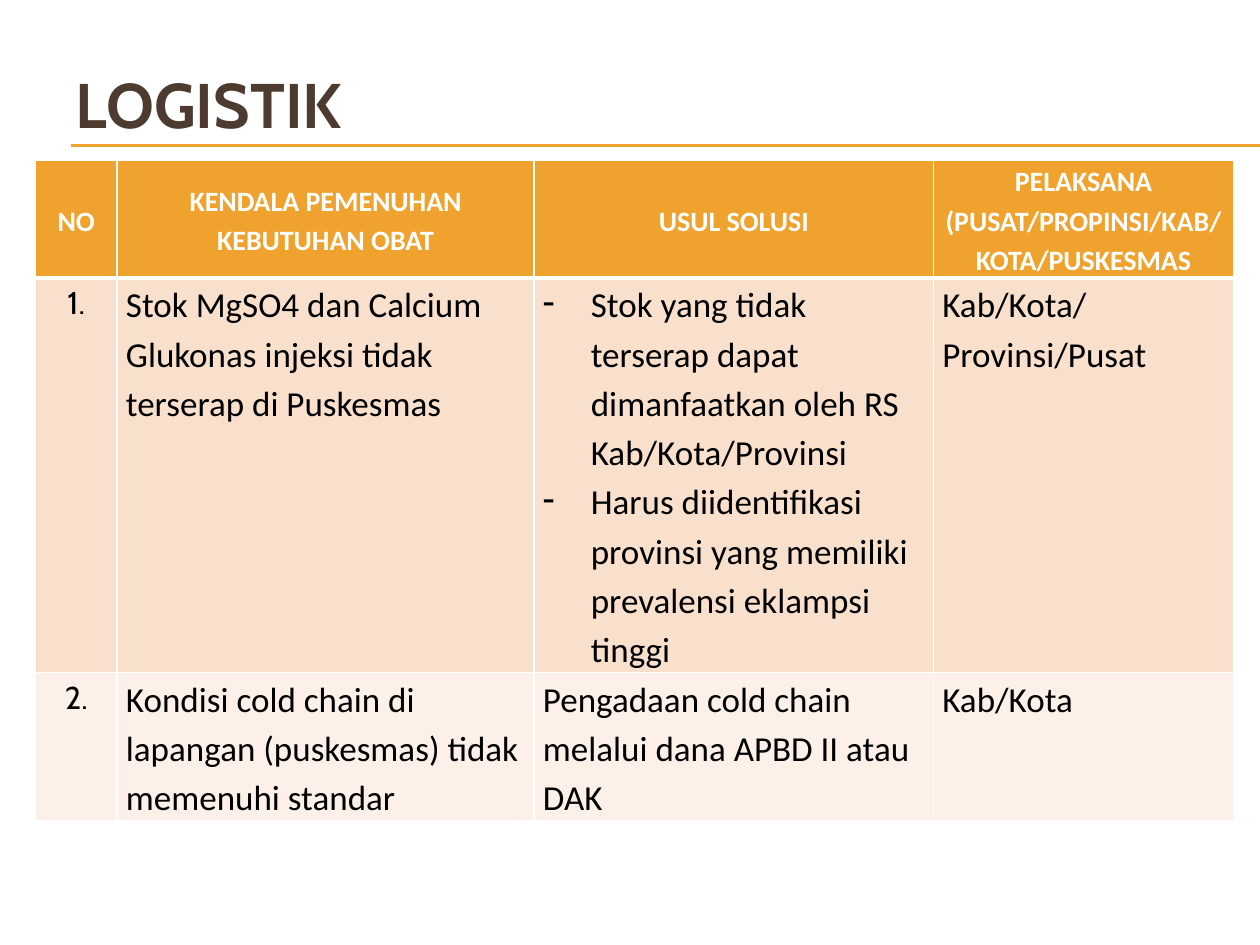
from dataclasses import dataclass

from lxml.etree import SubElement
from pptx import Presentation
from pptx.dml.color import RGBColor
from pptx.enum.shapes import MSO_CONNECTOR as Conn
from pptx.enum.text import MSO_ANCHOR as Anchor, PP_ALIGN as Align
from pptx.oxml import parse_xml
from pptx.oxml.ns import nsdecls, qn
from pptx.util import Inches, Pt


@dataclass(frozen=True)
class Theme:
    accent: str = "F0A22E"
    title: str = "4E3B30"
    white: str = "FFFFFF"
    black: str = "000000"
    bands: tuple = ("F9E0CD", "FCF0E8")
    heading_font: str = "Cabin"
    body_font: str = "Calibri"
    title_size: int = 36
    header_size: int = 16
    number_size: int = 18
    body_size: int = 20


@dataclass(frozen=True)
class Row:
    number: str
    problem: str
    solutions: tuple
    actor: str


T = Theme()
HEADERS = ("NO", "KENDALA PEMENUHAN KEBUTUHAN OBAT", "USUL SOLUSI",
           "PELAKSANA (PUSAT/PROPINSI/KAB/KOTA/PUSKESMAS")
ROWS = (
    Row("1.", "Stok MgSO4 dan Calcium Glukonas injeksi tidak terserap di Puskesmas",
        ("Stok yang tidak terserap dapat dimanfaatkan oleh RS Kab/Kota/Provinsi",
         "Harus diidentifikasi provinsi yang memiliki prevalensi eklampsi tinggi"),
        "Kab/Kota/Provinsi/Pusat"),
    Row("2.", "Kondisi cold chain di lapangan (puskesmas) tidak memenuhi standar",
        ("Pengadaan cold chain melalui dana APBD II atau DAK",), "Kab/Kota"),
)
COL_WIDTHS = (0.65, 3.31, 3.17, 2.38)
ROW_HEIGHTS = (0.92, 3.13, 1.17)


def write(tf, *lines: str, size: int = T.body_size, font: str = T.body_font,
          color: str = T.black, bold: bool = False, align=Align.LEFT,
          spacing: float = 1.0, bullet: str = "") -> None:
    """Write one paragraph per line, all in the same format."""
    for i, line in enumerate(lines):
        p = tf.add_paragraph() if i else tf.paragraphs[0]
        p.alignment, p.line_spacing = align, spacing
        if bullet:
            pPr = p._p.get_or_add_pPr()
            pPr.set("marL", str(Inches(0.38)))
            pPr.set("indent", str(-Inches(0.38)))
            SubElement(pPr, qn("a:buChar")).set("char", bullet)
        r = p.add_run()
        r.text = line
        r.font.size, r.font.name, r.font.bold = Pt(size), font, bold
        r.font.color.rgb = RGBColor.from_string(color)


def set_borders(cell, bottom: float = 1, top: float = 1) -> None:
    tcPr = cell._tc.get_or_add_tcPr()
    widths = {"lnL": 1, "lnR": 1, "lnT": top, "lnB": bottom}
    for i, (tag, width) in enumerate(widths.items()):
        tcPr.insert(i, parse_xml(
            f'<a:{tag} {nsdecls("a")} w="{Pt(width)}"><a:solidFill>'
            f'<a:srgbClr val="{T.white}"/></a:solidFill></a:{tag}>'))


def fill_cell(cell, *lines: str, fill: str, anchor=Anchor.TOP, tight: bool = True,
              top: float = 1, bottom: float = 1, **text_format) -> None:
    cell.fill.solid()
    cell.fill.fore_color.rgb = RGBColor.from_string(fill)
    cell.vertical_anchor = anchor
    if tight:
        cell.margin_left = cell.margin_right = Inches(0.07)
        cell.margin_top = cell.margin_bottom = 0
    set_borders(cell, bottom, top)
    write(cell.text_frame, *lines, **text_format)


def add_rule(s, y: float) -> None:
    line = s.shapes.add_connector(Conn.STRAIGHT, Inches(0.56), Inches(y),
                                  Inches(10), Inches(y))
    line.line.color.rgb = RGBColor.from_string(T.accent)
    line.line.width = Pt(0.75)
    SubElement(line._element.spPr, qn("a:effectLst"))


def add_title(s, text: str) -> None:
    sp = s.shapes.title
    sp.left, sp.top, sp.width, sp.height = map(Inches, (0.5, 0.36, 9.5, 0.92))
    sp.text_frame.vertical_anchor = Anchor.MIDDLE
    write(sp.text_frame, text, size=T.title_size, font=T.heading_font,
          color=T.title, bold=True)


def add_logistics_table(s) -> None:
    frame = s.shapes.add_table(len(ROW_HEIGHTS), len(COL_WIDTHS), Inches(0.28), Inches(1.27),
                               Inches(sum(COL_WIDTHS)), Inches(sum(ROW_HEIGHTS)))
    table = frame.table
    table.horz_banding = False
    for col, width in zip(table.columns, COL_WIDTHS):
        col.width = Inches(width)
    for row, height in zip(table.rows, ROW_HEIGHTS):
        row.height = Inches(height)

    # Header row
    for c, text in enumerate(HEADERS):
        fill_cell(table.cell(0, c), text, fill=T.accent, anchor=Anchor.MIDDLE, bottom=3,
                  size=T.header_size, color=T.white, bold=True,
                  align=Align.CENTER, spacing=1.15)

    # Body rows
    for r, (row, fill) in enumerate(zip(ROWS, T.bands), start=1):
        top = 3 if r == 1 else 1
        fill_cell(table.cell(r, 0), row.number, fill=fill, top=top, tight=False,
                  size=T.number_size, font=T.heading_font, align=Align.CENTER)
        for c, lines in enumerate(((row.problem,), row.solutions, (row.actor,)), start=1):
            fill_cell(table.cell(r, c), *lines, fill=fill, top=top, spacing=1.15,
                      bullet="-" if len(lines) > 1 else "")


def main() -> None:
    prs = Presentation()
    prs.slide_width, prs.slide_height = Inches(10), Inches(7.5)
    s = prs.slides.add_slide(prs.slide_layouts[5])
    # Double rule under the title
    for y in (1.15, 1.16):
        add_rule(s, y)
    add_title(s, "LOGISTIK")
    add_logistics_table(s)
    prs.save("out.pptx")


if __name__ == "__main__":
    main()
